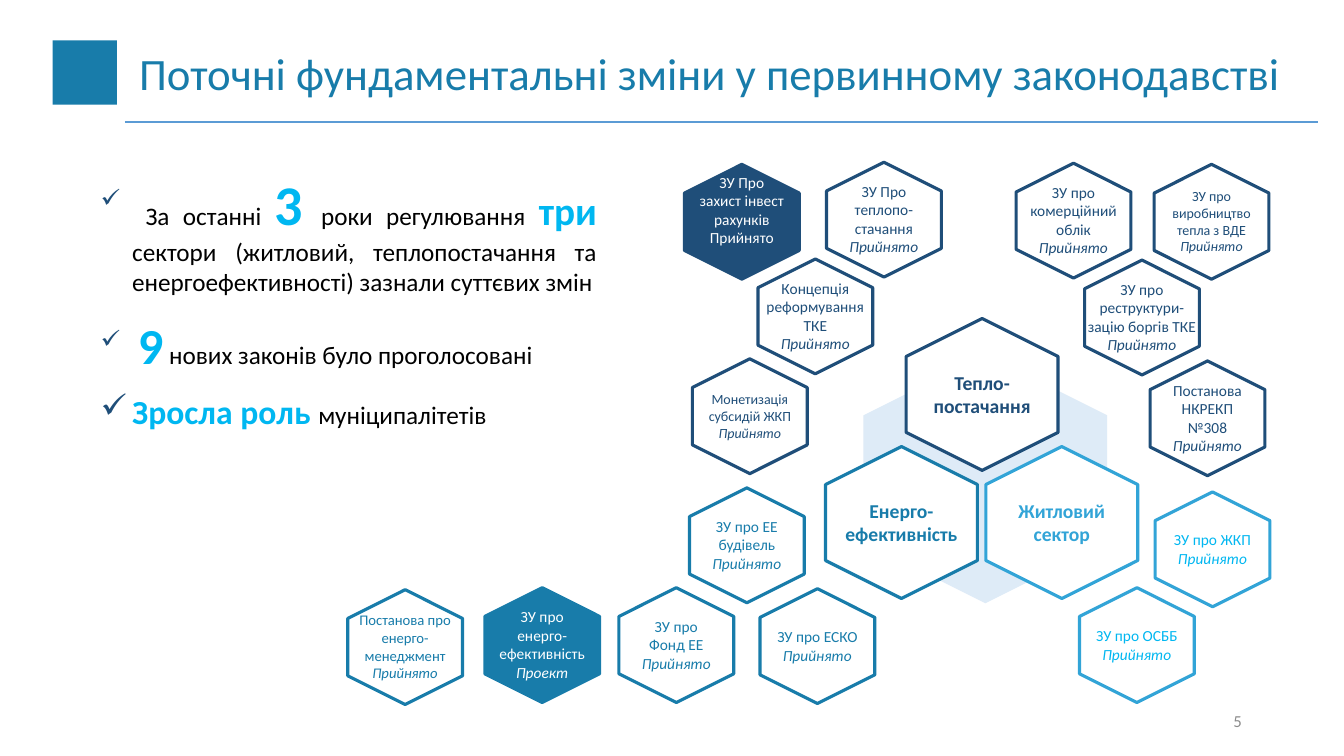
from dataclasses import dataclass

from lxml import etree
from pptx import Presentation
from pptx.dml.color import RGBColor
from pptx.enum.shapes import MSO_CONNECTOR, MSO_SHAPE
from pptx.enum.text import MSO_ANCHOR, MSO_AUTO_SIZE, PP_ALIGN
from pptx.oxml.ns import qn
from pptx.util import Pt

HEXAGON, RECTANGLE = MSO_SHAPE.HEXAGON, MSO_SHAPE.RECTANGLE
STRAIGHT = MSO_CONNECTOR.STRAIGHT
LEFT, CENTER, RIGHT, JUSTIFY = PP_ALIGN.LEFT, PP_ALIGN.CENTER, PP_ALIGN.RIGHT, PP_ALIGN.JUSTIFY
TOP, MIDDLE = MSO_ANCHOR.TOP, MSO_ANCHOR.MIDDLE
NO_FIT, GROW = MSO_AUTO_SIZE.NONE, MSO_AUTO_SIZE.SHAPE_TO_FIT_TEXT


@dataclass(frozen=True)
class Theme:
    """Colours, font and type sizes of the slide."""
    font: str = "Calibri"
    heat: RGBColor = RGBColor(0x1F, 0x4E, 0x79)
    energy: RGBColor = RGBColor(0x18, 0x7C, 0xAA)
    housing: RGBColor = RGBColor(0x32, 0xA4, 0xD7)
    accent: RGBColor = RGBColor(0x00, 0xB7, 0xF1)
    backdrop: RGBColor = RGBColor(0xDE, 0xEB, 0xF7)
    rule: RGBColor = RGBColor(0x5B, 0x9B, 0xD5)
    grey: RGBColor = RGBColor(0x8C, 0x8C, 0x8C)
    black: RGBColor = RGBColor(0, 0, 0)
    white: RGBColor = RGBColor(0xFF, 0xFF, 0xFF)
    title: float = 32
    body: float = 18
    sector: float = 14
    number: float = 12
    law: float = 11
    law_medium: float = 10.5
    law_small: float = 10


THEME = Theme()
ADOPTED = "Прийнято"
SMALL, LARGE = 82, 108.5

SECTORS = [
    (647.3, 227.5, "Тепло-постачання", THEME.heat),
    (589.7, 319, "Енерго-ефективність", THEME.energy),
    (704.2, 319, "Житловий сектор", THEME.housing),
]

HEAT_LAWS = [
    (774.7, 185.8, 98.6, THEME.law, 4, ["ЗУ про реструктури-зацію боргів ТКЕ", ADOPTED]),
    (725.8, 116.6, 82, THEME.law, 4, ["ЗУ про комерційний облік", ADOPTED]),
    (821.5, 257.8, 82, THEME.law, 4, ["Постанова НКРЕКП", "№308", ADOPTED]),
    (541.4, 185, 85, THEME.law, 4, ["Концепція реформування ТКЕ", ADOPTED]),
    (590.4, 115.9, 82, THEME.law, 4, ["ЗУ Про теплопо-стачання", ADOPTED]),
    (494.6, 256.3, 84, THEME.law_small, 3, ["Монетизація субсидій ЖКП", ADOPTED]),
    (824.4, 117.4, 88, THEME.law_small, 4, ["ЗУ про виробництво тепла з ВДЕ", ADOPTED]),
]
HOUSING_LAWS = [
    (771.1, 419.8, 82, THEME.law, 2, ["ЗУ про ОСББ", ADOPTED]),
    (825.1, 351.4, 82, THEME.law, 2, ["ЗУ про ЖКП", ADOPTED]),
]
ENERGY_LAWS = [
    (542.9, 420.5, 82, THEME.law, 2, ["ЗУ про ЕСКО", ADOPTED]),
    (442.1, 419.8, 82, THEME.law, 3, ["ЗУ про", "Фонд ЕЕ", ADOPTED]),
    (492.5, 348.5, 82, THEME.law, 3, ["ЗУ про ЕЕ будівель", ADOPTED]),
    (248.4, 421.2, 86.4, THEME.law_medium, 4, ["Постанова про енерго-менеджмент", ADOPTED]),
]
PROJECT_LAW = (346.3, 419.8, 82, THEME.law, 4, ["ЗУ про енерго-ефективність", "Проект"])
INVESTMENT_LAW = (488.9, 117.4, 85, THEME.law, 4, ["ЗУ Про", "захист інвест рахунків", ADOPTED])

FINDINGS = [
    [(" ", THEME.body, THEME.heat, True), ("За останні ", THEME.body, THEME.black, False),
     ("3", 40, THEME.accent, True), (" ", 32, THEME.heat, True),
     ("роки регулювання ", THEME.body, THEME.black, False), ("три ", 28, THEME.accent, True),
     ("сектори (житловий, теплопостачання та енергоефективності) зазнали суттєвих змін",
      THEME.body, THEME.black, False)],
    [(" ", THEME.body, THEME.heat, True), ("9", 36, THEME.accent, True),
     (" ", THEME.body, THEME.heat, False),
     ("нових законів було проголосовані", THEME.body, THEME.black, False)],
    [("Зросла роль ", 24, THEME.accent, True),
     ("муніципалітетів", THEME.body, THEME.black, False)],
]


def style_run(run, size, color, bold=False, italic=False):
    """Apply the theme font and the given look to a run."""
    font = run.font
    font.name, font.size, font.bold, font.italic = THEME.font, Pt(size), bold, italic
    font.color.rgb = color


def add_text(slide, box, lines, size, color, align=CENTER, bold=False, status=False, anchor=TOP):
    """Add a wrapped text box, one paragraph a line, with an italic last line for a status."""
    frame = slide.shapes.add_textbox(*map(Pt, box)).text_frame
    frame.text = "\n".join(lines)
    frame.word_wrap = True
    frame.auto_size = GROW if anchor == TOP else NO_FIT
    frame.vertical_anchor = anchor
    for index, paragraph in enumerate(frame.paragraphs):
        paragraph.alignment = align
        italic = status and index == len(lines) - 1
        for run in paragraph.runs:
            style_run(run, size, color, bold, italic)


def add_block(slide, kind, box, fill=None, line=None, rotation=0):
    """Add a flat preset shape with an optional fill and outline."""
    shape = slide.shapes.add_shape(kind, *map(Pt, box))
    shape.shadow.inherit = False
    shape.rotation = rotation
    if fill is None:
        shape.fill.background()
    else:
        shape.fill.solid()
        shape.fill.fore_color.rgb = fill
    if line is None:
        shape.line.fill.background()
    else:
        shape.line.color.rgb = line
        shape.line.width = Pt(2.25)


def add_cell(slide, left, top, side, width, size, rows, lines, line, color,
             fill=None, bold=False, status=True, rise=0):
    """Add an upright hexagon with its label centred on it."""
    add_block(slide, HEXAGON, (left, top, side, side), fill, line, 270)
    height = rows * size * 1.22 + 7.2
    box = (left + (side - width) / 2, top + (side - height) / 2 - rise, width, height)
    add_text(slide, box, lines, size, color, bold=bold, status=status)


def add_laws(slide, laws, line, color, fill=None, status=True, rise=0):
    """Add the small hexagons of one sector."""
    for left, top, width, size, rows, lines in laws:
        add_cell(slide, left, top, SMALL, width, size, rows, lines, line, color,
                 fill, status=status, rise=rise)


def add_honeycomb(slide):
    """Add the three sectors and the laws around them."""
    add_block(slide, HEXAGON, (614.9, 254.9, 177.8, 174.2), THEME.backdrop, rotation=270)
    for left, top, name, color in SECTORS:
        add_cell(slide, left, top, LARGE, LARGE, THEME.sector, 2, [name], color, color,
                 THEME.white, bold=True, status=False)
    add_laws(slide, HEAT_LAWS, THEME.heat, THEME.heat)
    add_laws(slide, HOUSING_LAWS, THEME.housing, THEME.accent)
    add_laws(slide, ENERGY_LAWS, THEME.energy, THEME.energy)
    add_laws(slide, [PROJECT_LAW], THEME.energy, THEME.white, THEME.energy)
    add_laws(slide, [INVESTMENT_LAW], THEME.heat, THEME.white, THEME.heat, False, 8)


def add_check_mark(paragraph):
    """Give a paragraph a hanging check mark bullet."""
    properties = paragraph._p.get_or_add_pPr()
    properties.set("marL", str(Pt(22.5)))
    properties.set("indent", str(Pt(-22.5)))
    color = etree.SubElement(properties, qn("a:buClr"))
    etree.SubElement(color, qn("a:srgbClr")).set("val", str(THEME.heat))
    etree.SubElement(properties, qn("a:buChar")).set("char", "✓")


def add_findings(slide, box):
    """Add the justified list of findings."""
    frame = slide.shapes.add_textbox(*map(Pt, box)).text_frame
    frame.word_wrap = True
    frame.auto_size = GROW
    for index, pieces in enumerate(FINDINGS):
        paragraph = frame.add_paragraph() if index else frame.paragraphs[0]
        paragraph.alignment = JUSTIFY
        paragraph.space_after = Pt(12)
        add_check_mark(paragraph)
        for text, size, color, bold in pieces:
            run = paragraph.add_run()
            run.text = text
            style_run(run, size, color, bold)


def add_header(slide, left, top, width, height):
    """Place the title, the emblem block and the rule below them."""
    title = slide.shapes.title
    title.left, title.top, title.width, title.height = map(Pt, (left, top, width, height))
    frame = title.text_frame
    frame.text = "Поточні фундаментальні зміни у первинному законодавстві"
    frame.word_wrap = True
    frame.auto_size = NO_FIT
    frame.vertical_anchor = TOP
    paragraph = frame.paragraphs[0]
    paragraph.alignment = LEFT
    paragraph.line_spacing = 0.9
    style_run(paragraph.runs[0], THEME.title, THEME.energy)
    add_block(slide, RECTANGLE, (left - 54.7, top - 4.3, 46, 46), THEME.energy)
    level = Pt(top + 54)
    rule = slide.shapes.add_connector(STRAIGHT, Pt(left - 3), level, Pt(left + width), level)
    rule.line.color.rgb = THEME.rule
    rule.line.width = Pt(1.5)
    etree.SubElement(rule._element.spPr, qn("a:effectLst"))


def main():
    """Build and save the slide."""
    presentation = Presentation()
    presentation.slide_width, presentation.slide_height = Pt(960), Pt(540)
    slide = presentation.slides.add_slide(presentation.slide_layouts[5])
    add_header(slide, 92.2, 33.1, 849.6, 50.4)
    add_honeycomb(slide)
    add_findings(slide, (64.8, 117.4, 368.6, 196.6))
    add_text(slide, (678.2, 500.4, 216, 28.8), ["5"], THEME.number, THEME.grey, RIGHT, anchor=MIDDLE)
    presentation.save("out.pptx")


if __name__ == "__main__":
    main()
